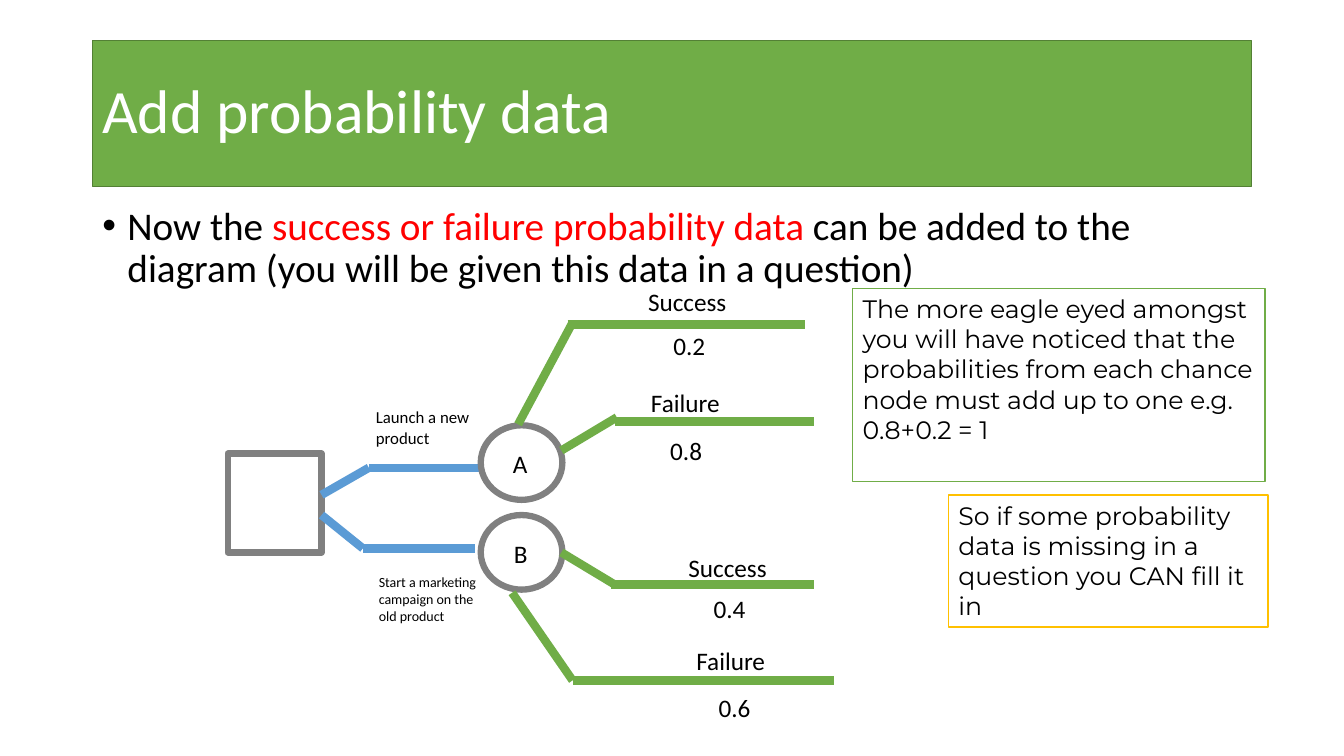
from dataclasses import dataclass

from lxml import etree
from pptx import Presentation
from pptx import util as u
from pptx.dml.color import RGBColor
from pptx.enum import shapes, text
from pptx.oxml.ns import qn


@dataclass(frozen=True)
class Theme:
    font: str = "Calibri"
    note_font: str = "Montserrat"
    black: str = "000000"
    white: str = "FFFFFF"
    red: str = "FF0000"
    green: str = "70AD47"
    dark_green: str = "538035"
    blue: str = "5B9BD5"
    grey: str = "808080"
    amber: str = "FFC000"
    title: float = 44
    body: float = 28
    label: float = 18
    option: float = 12
    small: float = 10


class SlideBuilder:
    def __init__(self, slide, theme):
        self.slide = slide
        self.theme = theme

    def format_run(self, r, size, color=None, font=None):
        r.font.size = u.Pt(size)
        r.font.name = font or self.theme.font
        r.font.color.rgb = RGBColor.from_string(color or self.theme.black)

    def shape(self, kind, box, line, weight, fill=None):
        sp = self.slide.shapes.add_shape(kind, *map(u.Pt, box))
        sp.shadow.inherit = False
        if fill:
            sp.fill.solid()
            sp.fill.fore_color.rgb = RGBColor.from_string(fill)
        else:
            sp.fill.background()
        sp.line.color.rgb = RGBColor.from_string(line)
        sp.line.width = u.Pt(weight)
        return sp

    def panel(self, box, words, size, color, line, fill, font, anchor):
        sp = self.shape(shapes.MSO_SHAPE.RECTANGLE, box, line, 1, fill)
        tf = sp.text_frame
        tf.text = words
        tf.word_wrap = True
        tf.vertical_anchor = anchor
        p = tf.paragraphs[0]
        p.alignment = text.PP_ALIGN.LEFT
        self.format_run(p.runs[0], size, color, font)
        return p

    def title(self, box, words):
        t = self.theme
        p = self.panel(box, words, t.title, t.white, t.dark_green, t.green,
                       t.font, text.MSO_ANCHOR.MIDDLE)
        p.line_spacing = 0.9

    def note(self, box, words, line):
        t = self.theme
        self.panel(box, words, t.label, t.black, line, t.white,
                   t.note_font, text.MSO_ANCHOR.TOP)

    def label(self, box, words, size, wrap=False):
        sp = self.slide.shapes.add_textbox(*map(u.Pt, box))
        tf = sp.text_frame
        tf.text = words
        tf.word_wrap = wrap
        self.format_run(tf.paragraphs[0].runs[0], size)

    def bullet(self, box, parts):
        sp = self.slide.shapes.add_textbox(*map(u.Pt, box))
        tf = sp.text_frame
        tf.word_wrap = True
        p = tf.paragraphs[0]
        p.line_spacing = 0.9
        p.space_before = u.Pt(10)
        pPr = p._p.get_or_add_pPr()
        pPr.set("marL", str(u.Pt(18)))
        pPr.set("indent", str(-u.Pt(18)))
        etree.SubElement(pPr, qn("a:buFont"), typeface="Arial")
        etree.SubElement(pPr, qn("a:buChar"), char="•")
        for words, color in parts:
            r = p.add_run()
            r.text = words
            self.format_run(r, self.theme.body, color)

    def branch(self, start, end, color):
        line = self.slide.shapes.add_connector(
            shapes.MSO_CONNECTOR.STRAIGHT, *map(u.Pt, start + end))
        line.line.color.rgb = RGBColor.from_string(color)
        line.line.width = u.Pt(6)
        etree.SubElement(line._element.spPr, qn("a:effectLst"))


def main():
    prs = Presentation()
    prs.slide_width, prs.slide_height = u.Pt(960), u.Pt(540)
    t = Theme()
    s = SlideBuilder(prs.slides.add_slide(prs.slide_layouts[6]), t)

    s.title((66, 28.8, 828, 104.4), "Add probability data")
    s.bullet((66, 144, 828, 342.7), [
        ("Now the ", t.black),
        ("success or failure probability data ", t.red),
        ("can be added to the diagram (you will be given this data in a question)", t.black),
    ])

    s.shape(shapes.MSO_SHAPE.RECTANGLE, (162.7, 324, 67, 70.6), t.grey, 4.5)
    decision_branches = [
        ((229.7, 353.5), (263.5, 334.1)), ((263.5, 334.1), (343.4, 334.1)),
        ((229.7, 367.9), (259.2, 391.7)), ((259.2, 391.7), (339.1, 391.7)),
    ]
    for start, end in decision_branches:
        s.branch(start, end, t.blue)
    s.label((261.4, 287.3, 84.2, 36), "Launch a new product", t.option, True)
    s.label((263.5, 406.1, 90.7, 43.9),
            "Start a marketing campaign on the old product", t.small, True)

    for name, top, left in (("A", 303.8, 359.3), ("B", 367.9, 360)):
        s.shape(shapes.MSO_SHAPE.OVAL, (343.4, top, 58.3, 53.3), t.grey, 4.5)
        s.label((left, top + 13, 25.2, 28.8), name, t.label)

    chance_branches = [
        ((370.1, 303.1), (409, 230.4)), ((405.4, 231.8), (575.3, 231.8)),
        ((401, 321.8), (440.6, 298.1)), ((439.2, 301), (581.8, 301)),
        ((409, 486), (595.4, 486)), ((436.3, 417.6), (581.8, 417.6)),
        ((365.8, 423.4), (409, 486)), ((401, 394.6), (439.2, 417.6)),
    ]
    for start, end in chance_branches:
        s.branch(start, end, t.green)

    widths = {"Success": 71.3, "Failure": 64.1}
    outcomes = [
        ("Success", 455.8, 200.9, "0.2", 473.8, 232.6),
        ("Failure", 457.9, 272.9, "0.8", 471.6, 307.4),
        ("Success", 484.6, 391, "0.4", 502.6, 420.5),
        ("Failure", 490.3, 457.2, "0.6", 506.2, 491),
    ]
    for name, left, top, chance, chance_left, chance_top in outcomes:
        s.label((left, top, widths[name], 28.8), name, t.label)
        s.label((chance_left, chance_top, 37.4, 28.8), chance, t.label)

    s.note((609.1, 205.9, 294.5, 138.2),
           "The more eagle eyed amongst you will have noticed that the probabilities "
           "from each chance node must add up to one e.g. 0.8+0.2 = 1", t.green)
    s.note((677.5, 353.5, 228.2, 94.3),
           "So if some probability data is missing in a question you CAN fill it in", t.amber)

    prs.save("out.pptx")


if __name__ == "__main__":
    main()
